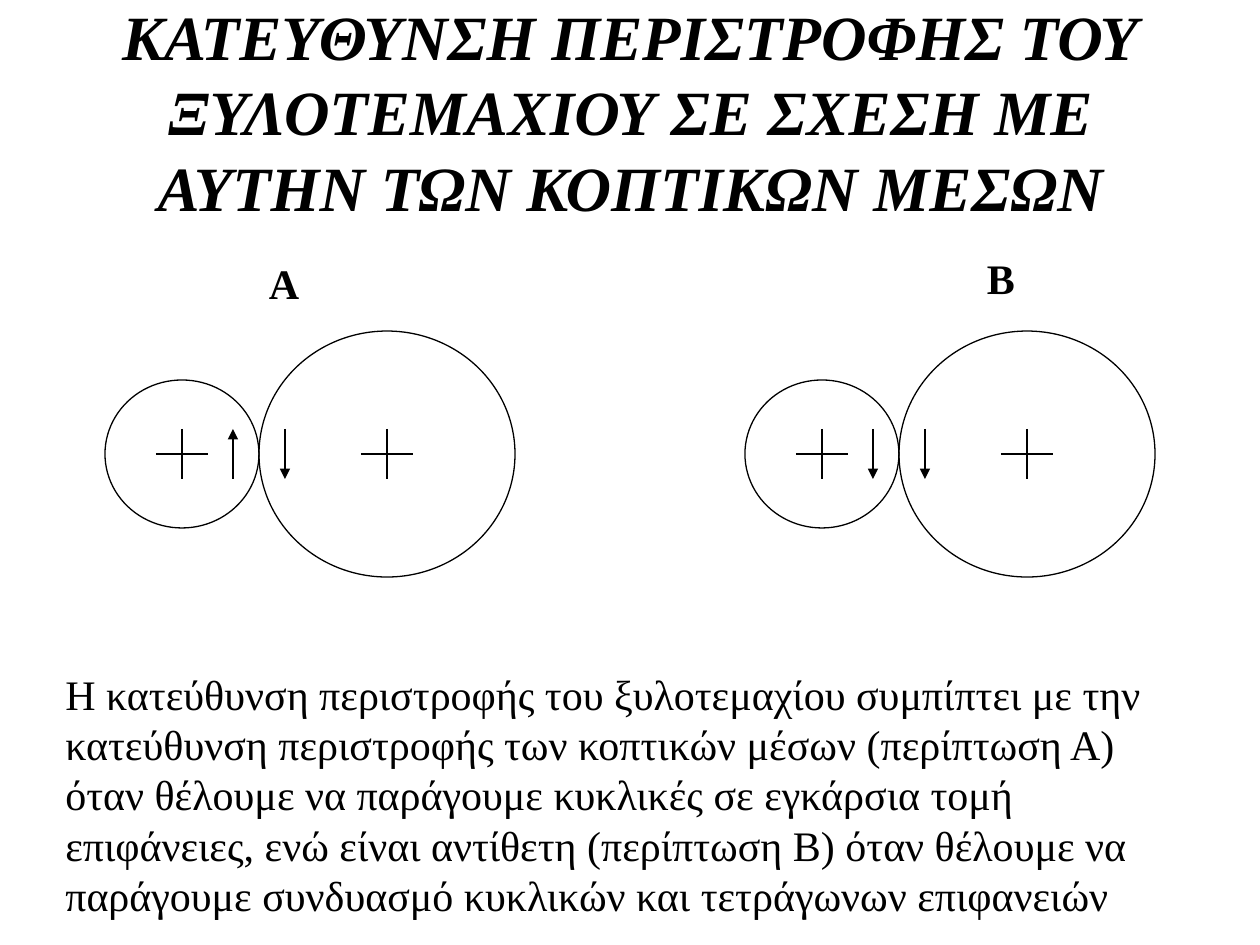
from pptx import Presentation
from pptx.dml.color import RGBColor
from pptx.enum.shapes import MSO_CONNECTOR, MSO_SHAPE
from pptx.enum.text import MSO_ANCHOR, MSO_AUTO_SIZE, PP_ALIGN
from pptx.oxml.ns import qn
from pptx.util import Emu, Pt
from lxml.etree import SubElement

SCALE = 914400 / 126
TITLE = "ΚΑΤΕΥΘΥΝΣΗ ΠΕΡΙΣΤΡΟΦΗΣ ΤΟΥ ΞΥΛΟΤΕΜΑΧΙΟΥ ΣΕ ΣΧΕΣΗ ΜΕ ΑΥΤΗΝ ΤΩΝ ΚΟΠΤΙΚΩΝ ΜΕΣΩΝ"
BODY = (
    "Η κατεύθυνση περιστροφής του ξυλοτεμαχίου συμπίπτει με την κατεύθυνση "
    "περιστροφής των κοπτικών μέσων (περίπτωση Α) όταν θέλουμε να παράγουμε "
    "κυκλικές σε εγκάρσια τομή επιφάνειες, ενώ είναι αντίθετη (περίπτωση Β) "
    "όταν θέλουμε να παράγουμε συνδυασμό κυκλικών και τετράγωνων επιφανειών"
)


def px(n):
    return Emu(round(n * SCALE))


def color(code):
    return RGBColor.from_string(code)


class Sheet:
    font = "Times New Roman"
    ink = "000000"
    weight = 0.75

    def __init__(self, slide):
        self.slide = slide

    def label(self, shape, text, size, align, anchor, inset=None, **style):
        frame = shape.text_frame
        frame.word_wrap = True
        frame.auto_size = MSO_AUTO_SIZE.NONE
        frame.vertical_anchor = anchor
        if inset is not None:
            for side in ("left", "top", "right", "bottom"):
                setattr(frame, f"margin_{side}", px(inset))
        para = frame.paragraphs[0]
        para.alignment = align
        run = para.add_run()
        run.text = text
        values = {"name": self.font, "size": Pt(size), **style}
        for key, value in values.items():
            setattr(run.font, key, value)
        run.font.color.rgb = color(self.ink)

    def title(self, box, text):
        shape = self.slide.shapes.title
        for key, value in zip(("left", "top", "width", "height"), box):
            setattr(shape, key, px(value))
        self.label(shape, text, 36, PP_ALIGN.CENTER, MSO_ANCHOR.MIDDLE,
                   bold=True, italic=True)

    def text(self, home, box, text, align=PP_ALIGN.LEFT, **style):
        shape = home.add_textbox(*map(px, box))
        self.label(shape, text, 24, align, MSO_ANCHOR.TOP, **style)

    def stroke(self, shape):
        shape.line.color.rgb = color(self.ink)
        shape.line.width = Pt(self.weight)

    def ring(self, home, x, y, wide, high):
        box = (x - wide / 2, y - high / 2, wide, high)
        shape = home.add_shape(MSO_SHAPE.OVAL, *map(px, box))
        shape.shadow.inherit = False
        shape.fill.background()
        self.stroke(shape)

    def line(self, home, *ends, arrow=False):
        link = home.add_connector(MSO_CONNECTOR.STRAIGHT, *map(px, ends))
        self.stroke(link)
        props = link._element.spPr
        if arrow:
            SubElement(props.find(qn("a:ln")), qn("a:tailEnd"),
                       type="triangle", w="med", len="med")
        SubElement(props, qn("a:effectLst"))

    def wheel(self, home, x, y, wide, high):
        self.ring(home, x, y, wide, high)
        self.line(home, x - 26, y, x + 26, y)
        self.line(home, x, y - 25, x, y + 25)

    def case(self, x, y, name, spot, turn):
        """Two touching wheels; turn is 1 if the left arrow points down."""
        home = self.slide.shapes.add_group_shape().shapes
        # Wheels meet at x
        self.wheel(home, x - 77, y, 154, 148)
        self.wheel(home, x + 128, y, 256, 246)
        # Turning arrows on either side of the contact point
        for at, way in ((x - 26, turn), (x + 26, 1)):
            self.line(home, at, y - 25 * way, at, y + 25 * way, arrow=True)
        self.text(home, (*spot, 102, 74), name, PP_ALIGN.CENTER,
                  inset=1, bold=True)


def main():
    deck = Presentation()
    deck.slide_width, deck.slide_height = px(1260), px(945)
    sheet = Sheet(deck.slides.add_slide(deck.slide_layouts[5]))

    # Heading
    sheet.title((95, 32, 1071, 157), TITLE)

    # Cases: equal and opposite arrows
    sheet.case(899, 454, "Β", (950, 252), 1)
    sheet.case(259, 454, "Α", (233, 257), -1)

    # Explanation
    sheet.text(sheet.slide.shapes, (53, 662, 1144, 265), BODY)

    deck.save("out.pptx")


if __name__ == "__main__":
    main()
